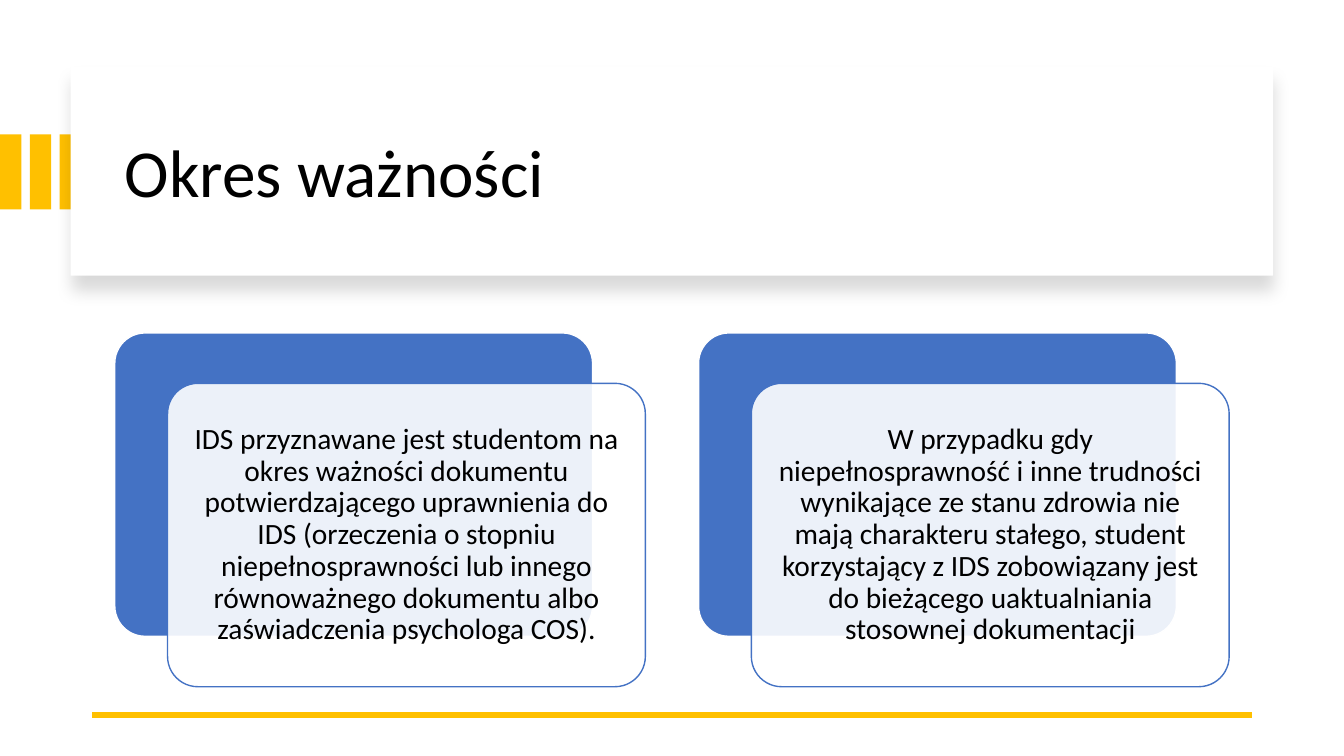
from lxml import etree
from pptx import Presentation
from pptx.dml.color import RGBColor
from pptx.enum.shapes import MSO_CONNECTOR, MSO_SHAPE
from pptx.enum.text import MSO_ANCHOR, PP_ALIGN
from pptx.oxml.ns import qn
from pptx.util import Pt

RECT = MSO_SHAPE.RECTANGLE
ROUND = MSO_SHAPE.ROUNDED_RECTANGLE
STRAIGHT = MSO_CONNECTOR.STRAIGHT
MIDDLE = MSO_ANCHOR.MIDDLE
LEFT, CENTER = PP_ALIGN.LEFT, PP_ALIGN.CENTER

TITLE = "Okres ważności"
CARDS = [
    "IDS przyznawane jest studentom na okres ważności dokumentu "
    "potwierdzającego uprawnienia do IDS (orzeczenia o stopniu "
    "niepełnosprawności lub innego równoważnego dokumentu albo "
    "zaświadczenia psychologa COS).",
    "W przypadku gdy niepełnosprawność i inne trudności wynikające ze stanu "
    "zdrowia nie mają charakteru stałego, student korzystający z IDS "
    "zobowiązany jest do bieżącego uaktualniania stosownej dokumentacji",
]


def rgb(value):
    return RGBColor.from_string(value)


class Deck:
    font = "Calibri"
    black, white, gold, blue = "000000", "FFFFFF", "FFC000", "4472C4"

    def __init__(self, width, height):
        self.prs = Presentation()
        self.prs.slide_width, self.prs.slide_height = Pt(width), Pt(height)
        self.s = self.prs.slides.add_slide(self.prs.slide_layouts[6])

    def box(self, kind, x, y, w, h, fill, line=None, alpha=None):
        sp = self.s.shapes.add_shape(kind, Pt(x), Pt(y), Pt(w), Pt(h))
        sp.shadow.inherit = False
        sp.fill.solid()
        sp.fill.fore_color.rgb = rgb(fill)
        if kind == ROUND:
            sp.adjustments[0] = 0.1
        if alpha:
            clr = sp._element.spPr.find(qn("a:solidFill"))[0]
            etree.SubElement(clr, qn("a:alpha"), val=str(alpha * 1000))
        if line:
            sp.line.color.rgb = rgb(line)
            sp.line.width = Pt(1)
        else:
            sp.line.fill.background()
        return sp

    def drop_shadow(self, sp, blur, dist, alpha):
        """Cast a black shadow straight down."""
        effects = sp._element.spPr.find(qn("a:effectLst"))
        shadow = etree.SubElement(
            effects, qn("a:outerShdw"), blurRad=str(Pt(blur)),
            dist=str(Pt(dist)), dir="5400000", algn="t", rotWithShape="0")
        clr = etree.SubElement(shadow, qn("a:srgbClr"), val=self.black)
        etree.SubElement(clr, qn("a:alpha"), val=str(alpha * 1000))

    def text(self, x, y, w, h, text, size, align=LEFT, inset=None, after=0):
        tb = self.s.shapes.add_textbox(Pt(x), Pt(y), Pt(w), Pt(h))
        tf = tb.text_frame
        tf.word_wrap = True
        tf.vertical_anchor = MIDDLE
        if inset is not None:
            tf.margin_left = tf.margin_right = Pt(inset)
            tf.margin_top = tf.margin_bottom = Pt(inset)
        p = tf.paragraphs[0]
        p.alignment = align
        p.line_spacing = 0.9
        p.space_after = Pt(after)
        r = p.add_run()
        r.text = text
        r.font.name = self.font
        r.font.size = Pt(size)
        r.font.color.rgb = rgb(self.black)

    def rule(self, x1, y1, x2, y2, color, width):
        c = self.s.shapes.add_connector(STRAIGHT, Pt(x1), Pt(y1), Pt(x2), Pt(y2))
        c.line.color.rgb = rgb(color)
        c.line.width = Pt(width)
        etree.SubElement(c._element.spPr, qn("a:effectLst"))

    def card(self, x, y, text):
        """Blue back plate with a translucent text plate set off from it."""
        w, h, dx, dy, pad = 341.3, 216.7, 37.7, 36, 6.4
        self.box(ROUND, x, y, w, h, self.blue, self.white)
        x, y = x + dx, y + dy
        self.box(ROUND, x, y, w, h, self.white, self.blue, alpha=90)
        self.text(x + pad, y + pad, w - 2 * pad, h - 2 * pad, text, 21,
                  CENTER, inset=6.3, after=7.35)


def main():
    deck = Deck(960, 540)
    for i in range(3):
        deck.box(RECT, i * 21.3, 96, 15.3, 53.5, deck.gold)
    panel = deck.box(RECT, 50.5, 48, 859, 149, deck.white)
    deck.drop_shadow(panel, blur=11, dist=10, alpha=15)
    deck.text(82, 64, 801.5, 122.5, TITLE, 48)
    deck.rule(894, 510.5, 66, 510.5, deck.gold, 4.5)
    for i, text in enumerate(CARDS):
        deck.card(82 + i * 417, 237.8, text)
    deck.prs.save("out.pptx")


if __name__ == "__main__":
    main()
